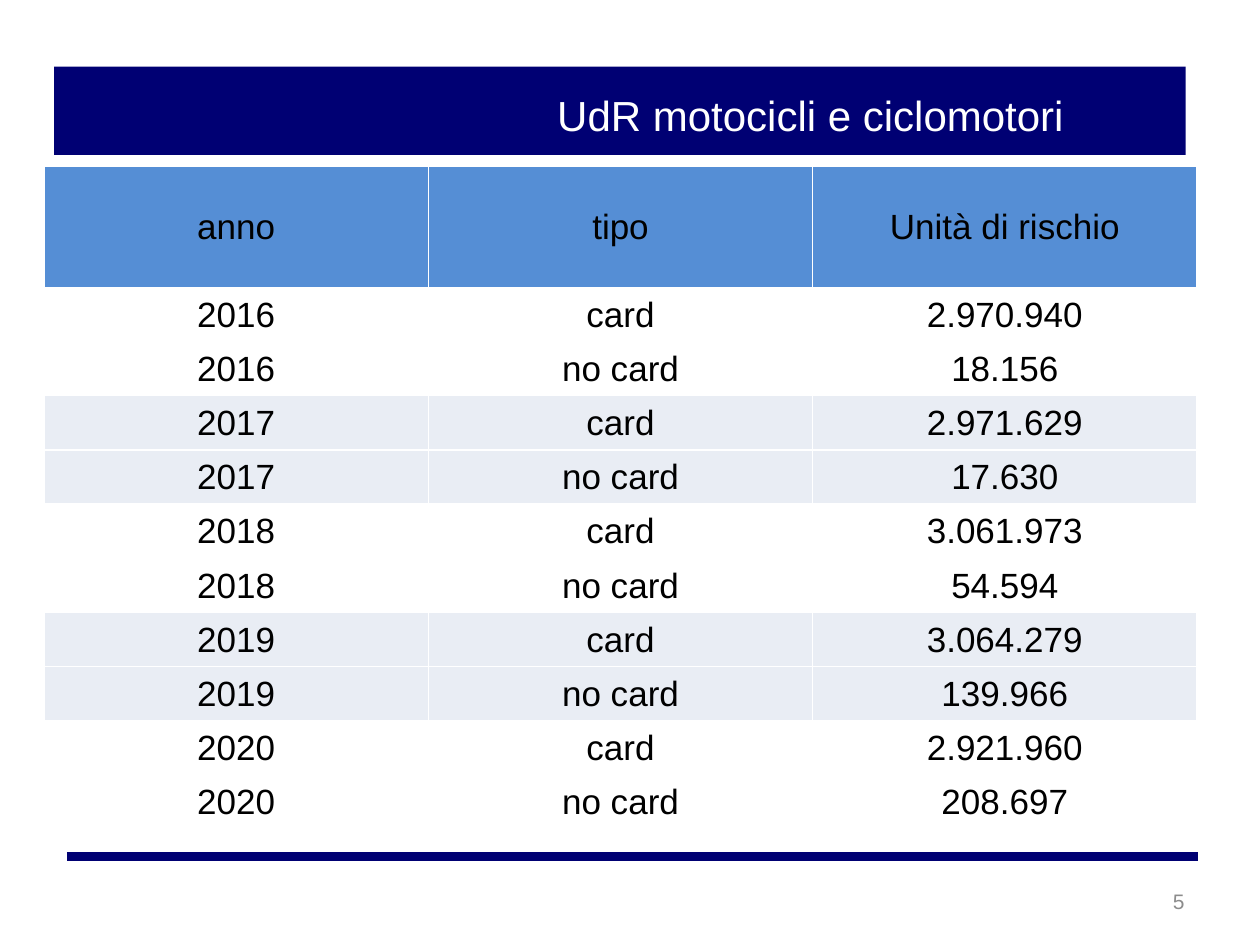
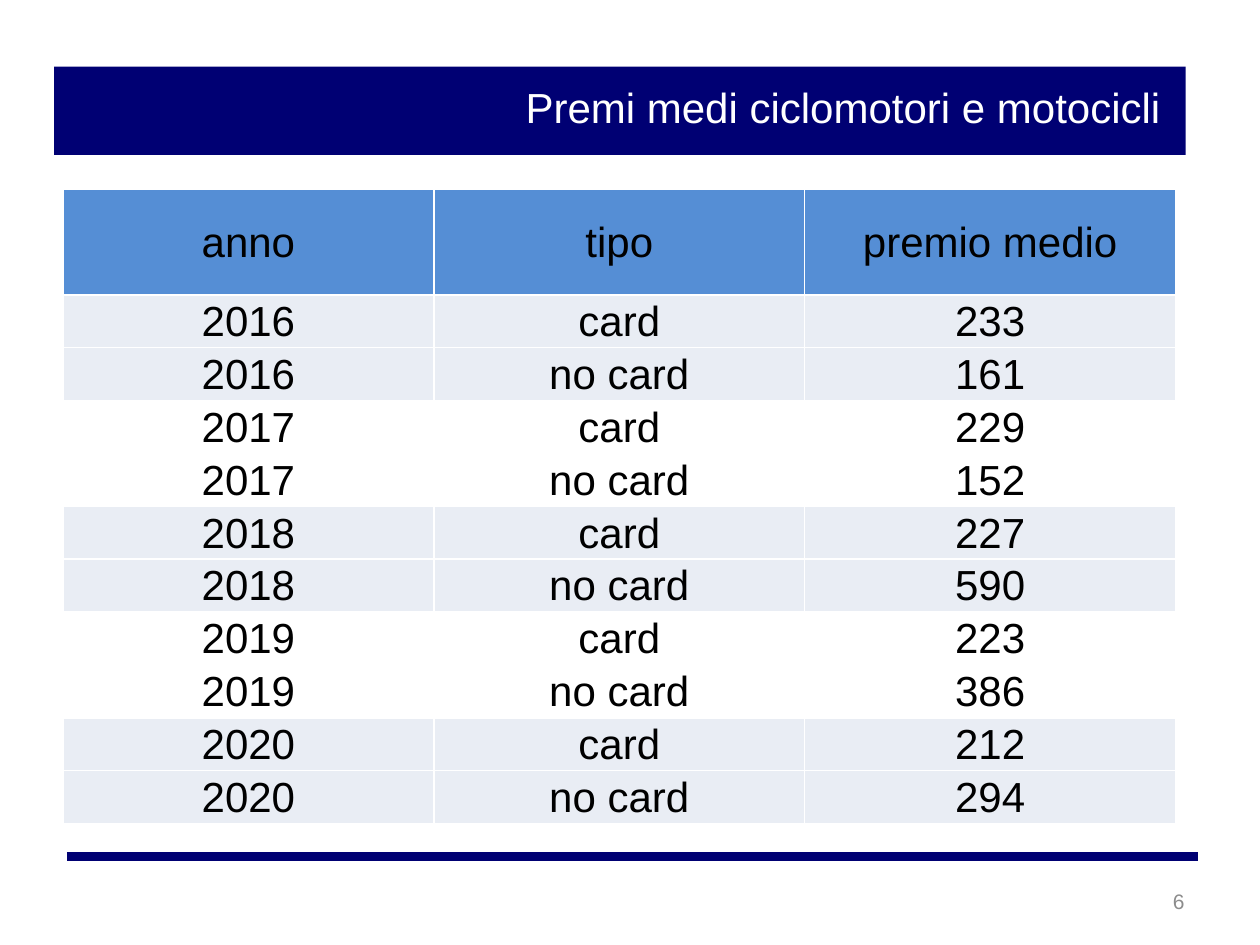
from itertools import product

from lxml import etree
from pptx import Presentation
from pptx.dml.color import RGBColor
from pptx.enum.shapes import MSO_CONNECTOR, MSO_SHAPE
from pptx.enum.text import MSO_ANCHOR, PP_ALIGN
from pptx.oxml import parse_xml
from pptx.oxml.ns import nsdecls, qn
from pptx.util import Inches, Pt

RECTANGLE = MSO_SHAPE.RECTANGLE
STRAIGHT = MSO_CONNECTOR.STRAIGHT
MIDDLE, TOP = MSO_ANCHOR.MIDDLE, MSO_ANCHOR.TOP
CENTER, RIGHT = PP_ALIGN.CENTER, PP_ALIGN.RIGHT

FONT = "Arial"
NAVY = "000073"
BLUE = "558ED5"
PALE = "E9EDF4"
WHITE = "FFFFFF"
BLACK = "000000"
GRAY = "8C8C8C"

YEARS = range(2016, 2021)
KINDS = ("card", "no card")
RISK_UNITS = ("2.970.940", "18.156", "2.971.629", "17.630", "3.061.973",
              "54.594", "3.064.279", "139.966", "2.921.960", "208.697")
AVERAGE_PREMIUMS = ("233", "161", "229", "152", "227",
                    "590", "223", "386", "212", "294")


def color(value):
    return RGBColor.from_string(value)


class Deck:
    def __init__(self):
        self.presentation = Presentation()
        self.presentation.slide_width = Inches(10)
        self.presentation.slide_height = Inches(7.5)
        self.slide = None

    def add_slide(self, number):
        self.slide = self.presentation.slides.add_slide(
            self.presentation.slide_layouts[6])
        self.band(0.43, 0.53, 8.98, 0.7)
        self.rule(0.53, 9.51, 6.8)
        self.text(str(number), (7.17, 6.95, 2.33, 0.4), 12, GRAY, RIGHT, MIDDLE)

    def band(self, left, top, width, height):
        band = self.slide.shapes.add_shape(
            RECTANGLE, Inches(left), Inches(top), Inches(width), Inches(height))
        band.shadow.inherit = False
        band.fill.solid()
        band.fill.fore_color.rgb = color(NAVY)
        band.line.fill.background()

    def rule(self, left, right, y):
        rule = self.slide.shapes.add_connector(
            STRAIGHT, Inches(left), Inches(y), Inches(right), Inches(y))
        rule.line.color.rgb = color(NAVY)
        rule.line.width = Pt(5)
        etree.SubElement(rule._element.spPr, qn("a:effectLst"))

    def fill_text(self, frame, content, size, ink, alignment):
        frame.text = content
        paragraph = frame.paragraphs[0]
        paragraph.alignment = alignment
        font = paragraph.runs[0].font
        font.name, font.size = FONT, Pt(size)
        font.color.rgb = color(ink)

    def text(self, content, area, size, ink, alignment, anchor=TOP):
        frame = self.slide.shapes.add_textbox(*map(Inches, area)).text_frame
        frame.word_wrap = True
        frame.vertical_anchor = anchor
        self.fill_text(frame, content, size, ink, alignment)

    def title(self, content, area, alignment):
        self.text(content, area, 24, WHITE, alignment)

    def cell(self, cell, content, size, fill):
        cell.margin_left = cell.margin_right = cell.margin_top = Inches(0.01)
        cell.margin_bottom = 0
        cell.vertical_anchor = MIDDLE
        self.fill_text(cell.text_frame, content, size, BLACK, CENTER)
        properties = cell._tc.get_or_add_tcPr()
        for side in "LRTB":
            properties.append(parse_xml(
                f'<a:ln{side} {nsdecls("a")} w="{Pt(1)}"><a:solidFill>'
                f'<a:srgbClr val="{WHITE}"/></a:solidFill></a:ln{side}>'))
        cell.fill.solid()
        cell.fill.fore_color.rgb = color(fill)

    def year_table(self, heading, values, origin, width, heights, size, bands):
        header_height, row_height = heights
        periods = product(YEARS, KINDS)
        rows = [("anno", "tipo", heading)]
        rows += [(str(year), kind, value)
                 for (year, kind), value in zip(periods, values)]
        height = header_height + row_height * len(values)
        table = self.slide.shapes.add_table(
            len(rows), 3, *map(Inches, (*origin, width, height))).table
        for column in table.columns:
            column.width = Inches(width / 3)
        for index, contents in enumerate(rows):
            table.rows[index].height = Inches(row_height if index else header_height)
            fill = bands[(index - 1) // len(KINDS) % 2] if index else BLUE
            for position, content in enumerate(contents):
                self.cell(table.cell(index, position), content, size, fill)


def main():
    deck = Deck()

    deck.add_slide(5)
    deck.title("UdR motocicli e ciclomotori", (3.74, 0.66, 4.8, 0.5), RIGHT)
    deck.year_table("Unità di rischio", RISK_UNITS, (0.35, 1.32), 9.15,
                    (0.96, 0.43), 20, (WHITE, PALE))

    deck.add_slide(6)
    deck.title("Premi medi ciclomotori e motocicli", (3.5, 0.6, 6.38, 0.5), CENTER)
    deck.year_table("premio medio", AVERAGE_PREMIUMS, (0.5, 1.5), 8.83,
                    (0.84, 0.42), 24, (PALE, WHITE))

    deck.presentation.save("out.pptx")


if __name__ == "__main__":
    main()
